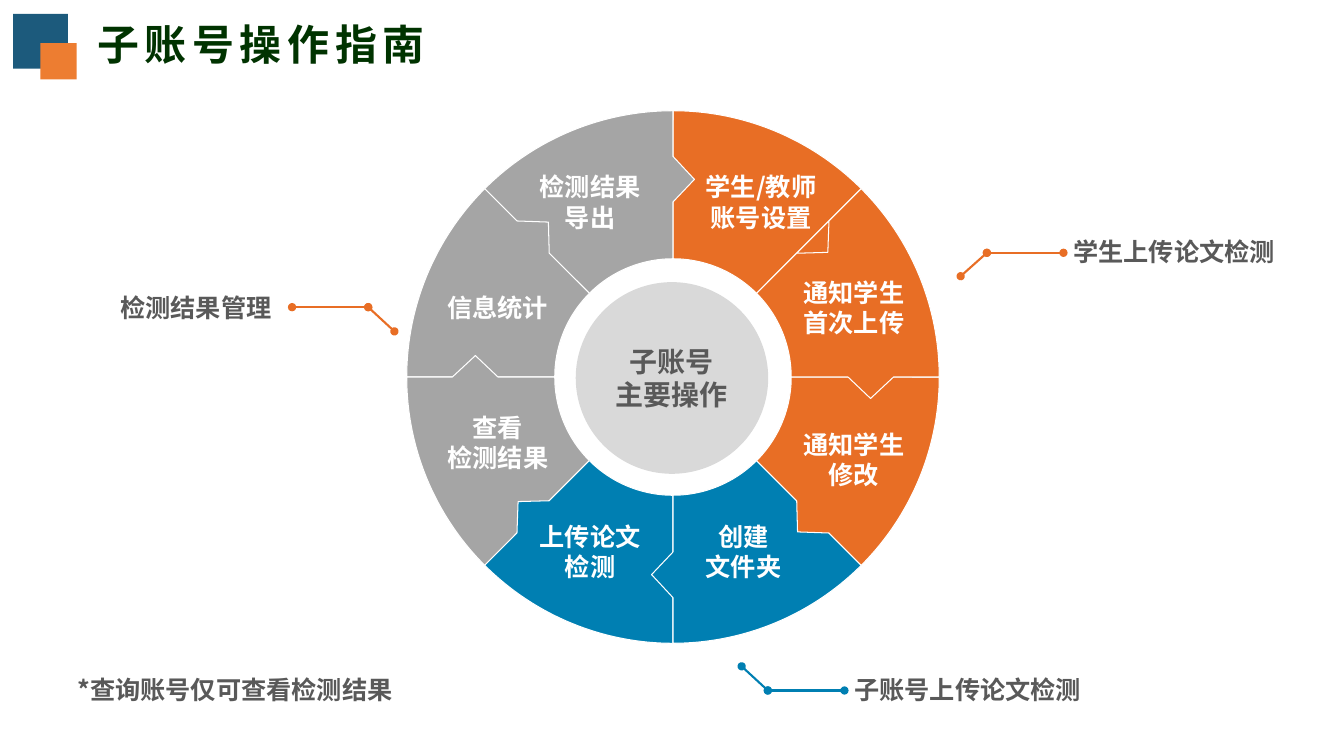
from itertools import pairwise
from math import cos, radians, sin

from lxml.etree import Element, SubElement
from pptx import Presentation
from pptx.dml.color import RGBColor
from pptx.enum.shapes import MSO_CONNECTOR as Link, MSO_SHAPE as Preset
from pptx.enum.text import MSO_ANCHOR as Anchor, MSO_AUTO_SIZE as Fit, PP_ALIGN as Align
from pptx.oxml.ns import qn
from pptx.util import Cm, Pt

FONT = "Noto Sans CJK SC"
ORANGE, BLUE, GRAY = "E86E25", "007FB2", "A5A5A5"
WHITE, DARK = "FFFFFF", "595959"


def paint(color_format, color):
    color_format.rgb = RGBColor.from_string(color)


def write(shape, text, size=18, color=DARK, align=Align.LEFT, anchor=Anchor.TOP,
          fit=Fit.SHAPE_TO_FIT_TEXT, spacing=0):
    frame = shape.text_frame
    frame.word_wrap = True
    frame.auto_size = fit
    frame.vertical_anchor = anchor
    frame.text = text
    for paragraph in frame.paragraphs:
        paragraph.alignment = align
        for run in paragraph.runs:
            run.font.name = FONT
            run.font.size = Pt(size)
            run.font.bold = True
            paint(run.font.color, color)
            properties = run.font._element
            SubElement(properties, qn("a:ea")).set("typeface", FONT)
            if spacing:
                properties.set("spc", str(spacing * 100))


deck = Presentation()
deck.slide_width, deck.slide_height = Cm(33.87), Cm(19.05)
slide = deck.slides.add_slide(deck.slide_layouts[5])
shapes = slide.shapes

title = shapes.title
title.left, title.top, title.width, title.height = Cm(2.2), Cm(0.35), Cm(24.92), Cm(1.52)
write(title, "子账号操作指南", size=30, color="003300", fit=Fit.NONE, spacing=4)

for left, top, side, color in [(0.33, 0.35, 1.38, "1C5A7C"), (1.02, 1.09, 0.91, "ED7D31")]:
    square = shapes.add_shape(Preset.RECTANGLE, Cm(left), Cm(top), Cm(side), Cm(side))
    square.shadow.inherit = False
    square.fill.solid()
    paint(square.fill.fore_color, color)
    square.line.fill.background()

center_x, center_y = 16.96, 9.5
outer, inner = 6.71, 2.98
tab = [(5.56, 0), (4.98, 0.54), (4.41, 0)]

steps = [
    ("学生/教师账号设置", ORANGE, 17.39, 4.2, 3.58),
    ("通知学生首次上传", ORANGE, 19.73, 6.87, 3.58),
    ("通知学生修改", ORANGE, 19.93, 10.69, 3.18),
    ("创建\n文件夹", BLUE, 17.39, 13.01, 2.69),
    ("上传论文检测", BLUE, 13.28, 13.01, 3.18),
    ("查看\n检测结果", GRAY, 10.95, 10.27, 3.2),
    ("信息统计", GRAY, 10.95, 7.24, 3.18),
    ("检测结果导出", GRAY, 13.28, 4.2, 3.18),
]
sector_angle = 360 // len(steps)

outlines = []
for index in [0, *range(len(steps) - 1, 0, -1)]:
    start, end = index * sector_angle, (index + 1) * sector_angle
    outline = [(start, outer, 0), (end, outer, 0)]
    outline += [(end, radius, offset) for radius, offset in tab]
    outline += [(end, inner, 0), (start, inner, 0)]
    arcs = [(0, outer, start, sector_angle), (5, inner, end, -sector_angle)]
    outlines.append((outline, arcs, steps[index][1]))
outlines.append(([(sector_angle, radius, offset) for radius, offset in tab], [], ORANGE))

for outline, arcs, color in outlines:
    points = []
    for angle, radius, offset in outline:
        turn = radians(angle)
        points.append((Cm(center_x + radius * sin(turn) + offset * cos(turn)),
                       Cm(center_y - radius * cos(turn) + offset * sin(turn))))
    builder = shapes.build_freeform(*points[0])
    builder.add_line_segments(points[1:], close=True)
    sector = builder.convert_to_shape()
    sector.shadow.inherit = False
    sector.fill.solid()
    paint(sector.fill.fore_color, color)
    paint(sector.line.color, WHITE)
    sector.line.width = Pt(0.75)
    edges = list(sector._element.iter(qn("a:lnTo")))
    for position, radius, begin, sweep in arcs:
        arc = Element(qn("a:arcTo"))
        arc.set("wR", str(Cm(radius)))
        arc.set("hR", str(Cm(radius)))
        arc.set("stAng", str((begin - 90) % 360 * 60000))
        arc.set("swAng", str(sweep * 60000))
        edges[position].getparent().replace(edges[position], arc)

hub = shapes.add_shape(Preset.OVAL, Cm(14.51), Cm(7.11), Cm(4.85), Cm(4.83))
hub.shadow.inherit = False
hub.fill.solid()
paint(hub.fill.fore_color, "D9D9D9")
hub.line.fill.background()
write(hub, "子账号\n主要操作", size=20, align=Align.CENTER, anchor=Anchor.MIDDLE, fit=Fit.NONE)

for label, color, left, top, width in steps:
    height = 1.02 if label == "信息统计" else 1.8
    step_label = shapes.add_textbox(Cm(left), Cm(top), Cm(width), Cm(height))
    write(step_label, label, color=WHITE, align=Align.CENTER)

leaders = [
    (ORANGE, [(24.21, 6.96), (24.87, 6.37), (26.8, 6.37)]),
    (BLUE, [(18.69, 16.79), (19.35, 17.4), (21.28, 17.4)]),
    (ORANGE, [(9.94, 8.35), (9.28, 7.74), (7.36, 7.74)]),
]
for color, bends in leaders:
    for (from_x, from_y), (to_x, to_y) in pairwise(bends):
        leader = shapes.add_connector(Link.STRAIGHT, Cm(from_x), Cm(from_y), Cm(to_x), Cm(to_y))
        paint(leader.line.color, color)
        leader.line.width = Pt(1.5)
        stroke = leader.line._get_or_add_ln()
        for tip in ("a:headEnd", "a:tailEnd"):
            SubElement(stroke, qn(tip)).set("type", "oval")
        SubElement(leader._element.spPr, qn("a:effectLst"))

notes = [
    ("学生上传论文检测", 26.8, 5.82, 6.17, Align.LEFT),
    ("子账号上传论文检测", 21.28, 16.87, 8.05, Align.LEFT),
    ("检测结果管理", 2.62, 7.24, 4.47, Align.RIGHT),
    ("*查询账号仅可查看检测结果", 1.7, 16.87, 9.75, Align.LEFT),
]
for text, left, top, width, align in notes:
    write(shapes.add_textbox(Cm(left), Cm(top), Cm(width), Cm(1.02)), text, align=align)

deck.save("out.pptx")
